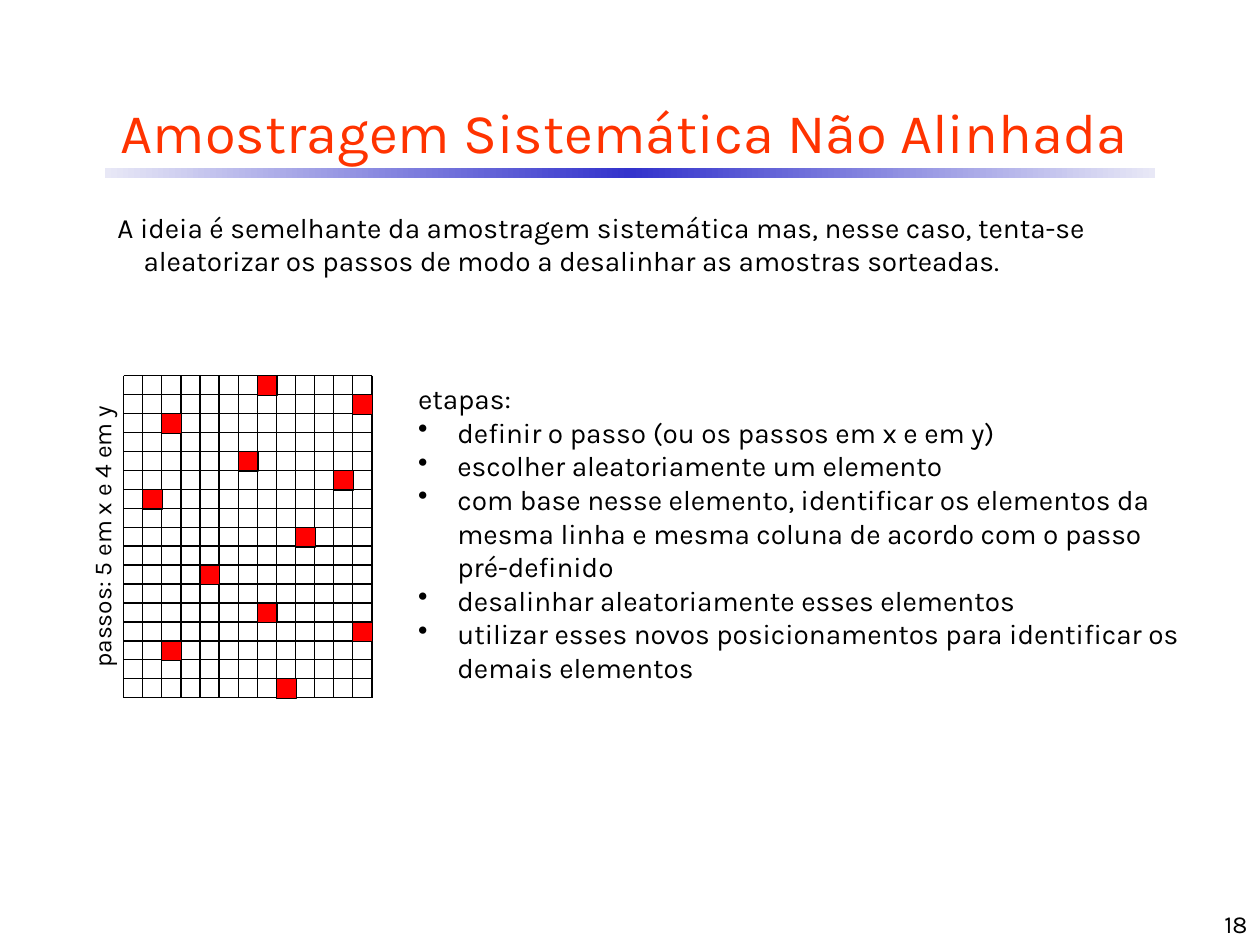
from copy import deepcopy

from lxml import etree
from pptx import Presentation
from pptx import util as u
from pptx.dml.color import RGBColor
from pptx.enum import shapes, text
from pptx.oxml.ns import qn

COLORS = {"ink": "000000", "title": "FF3300", "sample": "FF0000",
          "paper": "FFFFFF", "rule": "3333CC", "rule_end": "E8E8F6"}
FONT = "Karla"
LEFT, TOP = 70.6, 214.6
COLUMNS, ROWS = 13, 17
CELL_WIDTH, CELL_HEIGHT = 10.92, 10.83
# Column and row of each sampled cell
SAMPLES = [(7, 0), (12, 1), (2, 2), (6, 4), (11, 5), (1, 6),
           (9, 8), (4, 10), (7, 12), (12, 13), (2, 14), (8, 16)]
STEPS = [
    "definir o passo (ou os passos em x e em y)",
    "escolher aleatoriamente um elemento",
    "com base nesse elemento, identificar os elementos da mesma linha "
    "e mesma coluna de acordo com o passo pré-definido",
    "desalinhar aleatoriamente esses elementos",
    "utilizar esses novos posicionamentos para identificar os demais elementos",
]


def rgb(name):
    return RGBColor.from_string(COLORS[name])


def points(*lengths):
    return [u.Pt(length) for length in lengths]


class Page:
    """Current slide and its drawing style."""

    def __init__(self, deck):
        self.slide = deck.slides.add_slide(deck.slide_layouts[5])
        self.shapes = self.slide.shapes

    def style(self, para, size, color="ink", align=text.PP_ALIGN.LEFT):
        para.alignment = align
        para.font.name = FONT
        para.font.size = u.Pt(size)
        para.font.color.rgb = rgb(color)

    def title(self, words, left, top, width, height):
        box = self.shapes.title
        box.left, box.top, box.width, box.height = points(left, top, width, height)
        box.text_frame.text = words
        box.text_frame.vertical_anchor = text.MSO_ANCHOR.MIDDLE
        self.style(box.text_frame.paragraphs[0], 32, "title", text.PP_ALIGN.CENTER)

    def text(self, lines, left, top, width, height, size=16,
             align=text.PP_ALIGN.LEFT, anchor=text.MSO_ANCHOR.TOP, wrap=True):
        box = self.shapes.add_textbox(*points(left, top, width, height))
        frame = box.text_frame
        frame.word_wrap = wrap
        frame.vertical_anchor = anchor
        frame.text = "\n".join(lines)
        for para in frame.paragraphs:
            self.style(para, size, align=align)
        return box

    def hang(self, para, indent, bullet=None):
        """Give a paragraph a hanging indent and, if asked, a bullet."""
        props = para._p.get_or_add_pPr()
        props.set("marL", str(u.Pt(indent)))
        props.set("indent", str(-u.Pt(indent)))
        if bullet:
            mark = etree.Element(qn("a:buChar"), char=bullet)
            props.find(qn("a:defRPr")).addprevious(mark)

    def rect(self, left, top, width, height, fill, line=None):
        box = self.shapes.add_shape(shapes.MSO_SHAPE.RECTANGLE,
                                    *points(left, top, width, height))
        box.shadow.inherit = False
        box.fill.solid()
        box.fill.fore_color.rgb = rgb(fill)
        if line:
            box.line.color.rgb = rgb(line)
            box.line.width = u.Pt(0.75)
        else:
            box.line.fill.background()
        return box

    def gradient_rule(self, left, top, width, height):
        """Draw a bar that fades out towards both ends."""
        fill = self.rect(left, top, width, height, "rule").fill
        fill.gradient()
        fill.gradient_angle = 0
        first, last = fill.gradient_stops
        first.color.rgb = last.color.rgb = rgb("rule_end")
        first.position, last.position = 0, 1
        first._gs.addnext(deepcopy(first._gs))
        middle = fill.gradient_stops[1]
        middle.position = 0.5
        middle.color.rgb = rgb("rule")

    def line(self, x1, y1, x2, y2):
        line = self.shapes.add_connector(shapes.MSO_CONNECTOR.STRAIGHT,
                                         *points(x1, y1, x2, y2))
        line.line.color.rgb = rgb("ink")
        line.line.width = u.Pt(0.75)
        etree.SubElement(line._element.spPr, qn("a:effectLst"))

    def sample_grid(self):
        width, height = COLUMNS * CELL_WIDTH, ROWS * CELL_HEIGHT
        self.rect(LEFT, TOP, width, height, "paper")
        for row in range(ROWS + 1):
            y = TOP + row * CELL_HEIGHT
            self.line(LEFT, y, LEFT + width, y)
        for column in range(COLUMNS + 1):
            x = LEFT + column * CELL_WIDTH
            self.line(x, TOP, x, TOP + height)
        for column, row in SAMPLES:
            self.rect(LEFT + column * CELL_WIDTH, TOP + row * CELL_HEIGHT,
                      11.3, 11.3, "sample", "ink")


def main():
    deck = Presentation()
    deck.slide_width, deck.slide_height = points(720, 540)
    page = Page(deck)

    page.gradient_rule(60, 96, 600, 6)
    page.title("Amostragem Sistemática Não Alinhada", 24, 48, 666, 54)
    idea = page.text(
        ["A ideia é semelhante da amostragem sistemática mas, nesse caso, tenta-se "
         "aleatorizar os passos de modo a desalinhar as amostras sorteadas."],
        60, 116.6, 607, 46)
    page.hang(idea.text_frame.paragraphs[0], 15)
    page.text(["18"], 570, 504, 150, 36, 14,
              text.PP_ALIGN.RIGHT, text.MSO_ANCHOR.BOTTOM)

    steps = page.text(["etapas:"] + STEPS, 231.8, 214.6, 457.2, 181.4)
    for para in steps.text_frame.paragraphs[1:]:
        page.hang(para, 22.5, "•")

    axis = page.text(["passos: 5 em x e 4 em y"], -25.9, 294.5, 168.5, 24.5,
                     14, text.PP_ALIGN.CENTER, wrap=False)
    axis.rotation = 270
    page.sample_grid()

    deck.save("out.pptx")


if __name__ == "__main__":
    main()
